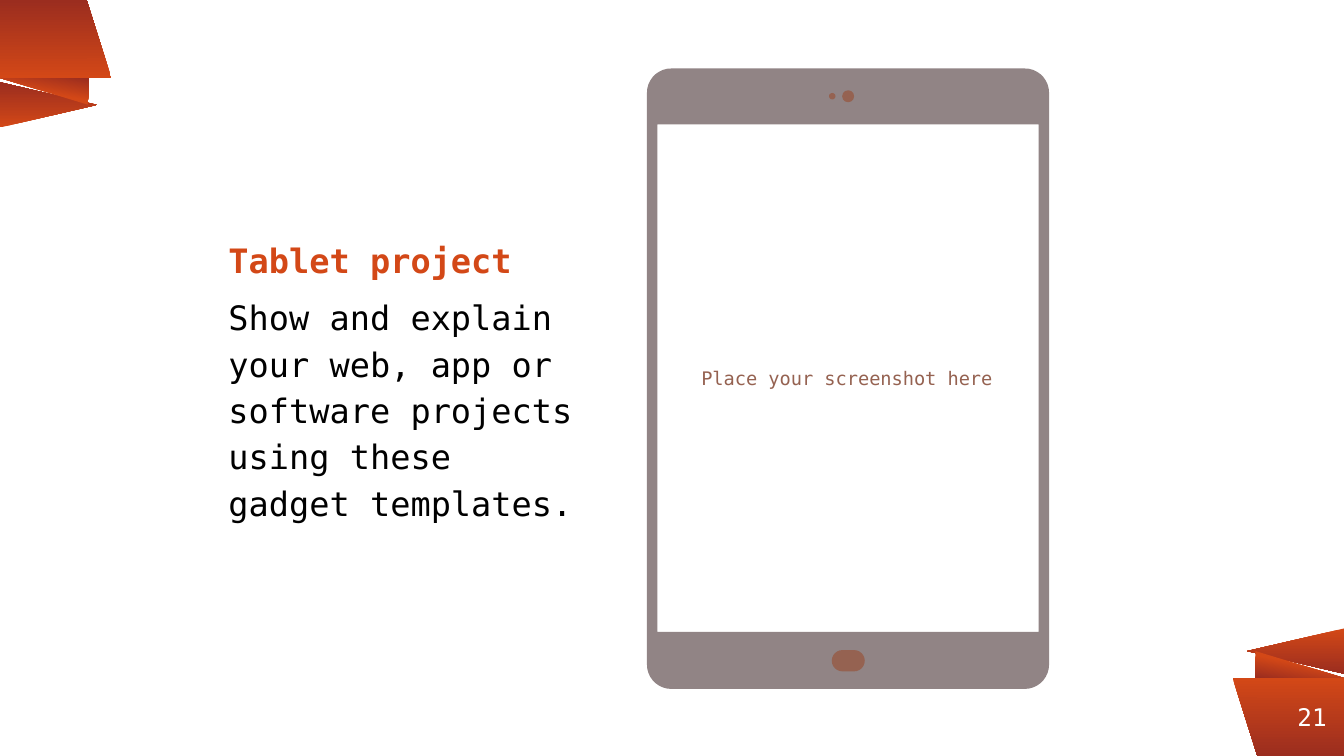
from math import cos, radians, sin

from pptx import Presentation
from pptx.dml.color import RGBColor
from pptx.enum.shapes import MSO_SHAPE
from pptx.enum.text import MSO_ANCHOR, PP_ALIGN
from pptx.util import Pt

WIDTH, HEIGHT = 720, 405
FONT = "DejaVu Sans Mono"
ORANGE = RGBColor(0xD3, 0x48, 0x17)
RUST = RGBColor(0x9B, 0x2D, 0x1F)
GRAY = RGBColor(0x91, 0x84, 0x85)
BROWN = RGBColor(0x95, 0x62, 0x51)
BLACK = RGBColor(0, 0, 0)
WHITE = RGBColor(0xFF, 0xFF, 0xFF)

RECTANGLE = MSO_SHAPE.RECTANGLE
ROUNDED = MSO_SHAPE.ROUNDED_RECTANGLE
OVAL = MSO_SHAPE.OVAL
TRIANGLE = MSO_SHAPE.ISOSCELES_TRIANGLE
RIGHT_TRIANGLE = MSO_SHAPE.RIGHT_TRIANGLE
MIDDLE = MSO_ANCHOR.MIDDLE
LEFT, CENTER, RIGHT = PP_ALIGN.LEFT, PP_ALIGN.CENTER, PP_ALIGN.RIGHT

# Folds of the top left ribbon: shape, box, rotation, gradient angle, first stop
RIBBON_FOLDS = [
    (TRIANGLE, (13.9, 30.2, 24.2, 52), 90, 180, 0),
    (RIGHT_TRIANGLE, (0, 41.8, 47.5, 14.4), 180, 260, 0.47),
    (RECTANGLE, (0, 0, 46.8, 41.8), 0, 90, 0),
    (RIGHT_TRIANGLE, (46.4, 0, 13.3, 41.8), 0, 90, 0),
]


def rounded_corners(left, top, right, bottom, radius):
    """Return the points of a rounded rectangle, clockwise from the top right."""
    centers = [
        (right - radius, top + radius),
        (right - radius, bottom - radius),
        (left + radius, bottom - radius),
        (left + radius, top + radius),
    ]
    return [
        (x + radius * cos(radians(angle)), y + radius * sin(radians(angle)))
        for corner, (x, y) in enumerate(centers)
        for angle in range(90 * corner - 90, 90 * corner + 1, 10)
    ]


class SlideBuilder:
    def __init__(self, slide):
        self.shapes = slide.shapes

    def preset(self, kind, box, color=None):
        shape = self.shapes.add_shape(kind, *map(Pt, box))
        self.finish(shape, color)
        return shape

    def finish(self, shape, color):
        shape.shadow.inherit = False
        shape.line.fill.background()
        if color is not None:
            shape.fill.solid()
            shape.fill.fore_color.rgb = color

    def ribbon(self, half_turn=False):
        """Draw the folded corner ribbon; a half turn puts it bottom right."""
        for kind, box, rotation, angle, first_stop in RIBBON_FOLDS:
            left, top, width, height = box
            if half_turn:
                left, top = WIDTH - left - width, HEIGHT - top - height
                rotation = (rotation + 180) % 360
            fold = self.preset(kind, (left, top, width, height))
            fold.rotation = rotation
            fold.fill.gradient()
            fold.fill.gradient_angle = angle
            start, end = fold.fill.gradient_stops
            start.color.rgb, end.color.rgb = ORANGE, RUST
            start.position, end.position = first_stop, 1

    def frame(self, outer, inner, color):
        """Draw the outer outline with the inner one cut out."""
        first, *rest = [(Pt(x), Pt(y)) for x, y in outer]
        hole_first, *hole_rest = [(Pt(x), Pt(y)) for x, y in inner]
        outline = self.shapes.build_freeform(*first)
        outline.add_line_segments(rest)
        outline.move_to(*hole_first)
        outline.add_line_segments(hole_rest)
        self.finish(outline.convert_to_shape(), color)

    def text(self, box, lines, size, align=LEFT, inset=0, spacing=1, before=0):
        """Add a text box; lines holds (wording, color, bold) tuples."""
        frame = self.shapes.add_textbox(*map(Pt, box)).text_frame
        frame.word_wrap = True
        frame.vertical_anchor = MIDDLE
        frame.margin_left = frame.margin_right = Pt(inset)
        frame.margin_top = frame.margin_bottom = Pt(inset)
        frame.text = "\n".join(wording for wording, _, _ in lines)
        for para, (_, color, bold) in zip(frame.paragraphs, lines):
            para.alignment = align
            para.line_spacing = spacing
            para.space_before = Pt(before)
            para.font.name = FONT
            para.font.size = Pt(size)
            para.font.bold = bold
            para.font.color.rgb = color


def main():
    deck = Presentation()
    deck.slide_width, deck.slide_height = Pt(WIDTH), Pt(HEIGHT)
    page = SlideBuilder(deck.slides.add_slide(deck.slide_layouts[6]))

    page.ribbon(half_turn=True)
    page.ribbon()
    page.text((351.4, 67, 204.5, 270.7),
              [("Place your screenshot here", BROWN, False)],
              10, CENTER, inset=7.2)
    page.text((672.5, 363, 38.2, 41.8), [("21", WHITE, False)], 13, RIGHT)

    body = rounded_corners(346.6, 36.7, 562, 369.1, 13)
    screen = [(556.4, 66.7), (556.4, 338.5), (352.2, 338.5), (352.2, 66.7)]
    page.frame(body, screen, GRAY)
    home_button = page.preset(ROUNDED, (445.6, 348.3, 17.7, 11.4), BROWN)
    home_button.adjustments[0] = 0.5
    page.preset(OVAL, (444.1, 49.8, 3.5, 3.5), BROWN)
    page.preset(OVAL, (451.2, 48.4, 6.4, 6.4), BROWN)

    page.text((122.4, 29.5, 190, 346.4),
              [("Tablet project", ORANGE, True),
               ("Show and explain your web, app or software projects "
                "using these gadget templates.", BLACK, False)],
              18, spacing=1.15, before=6)
    deck.save("out.pptx")


if __name__ == "__main__":
    main()
